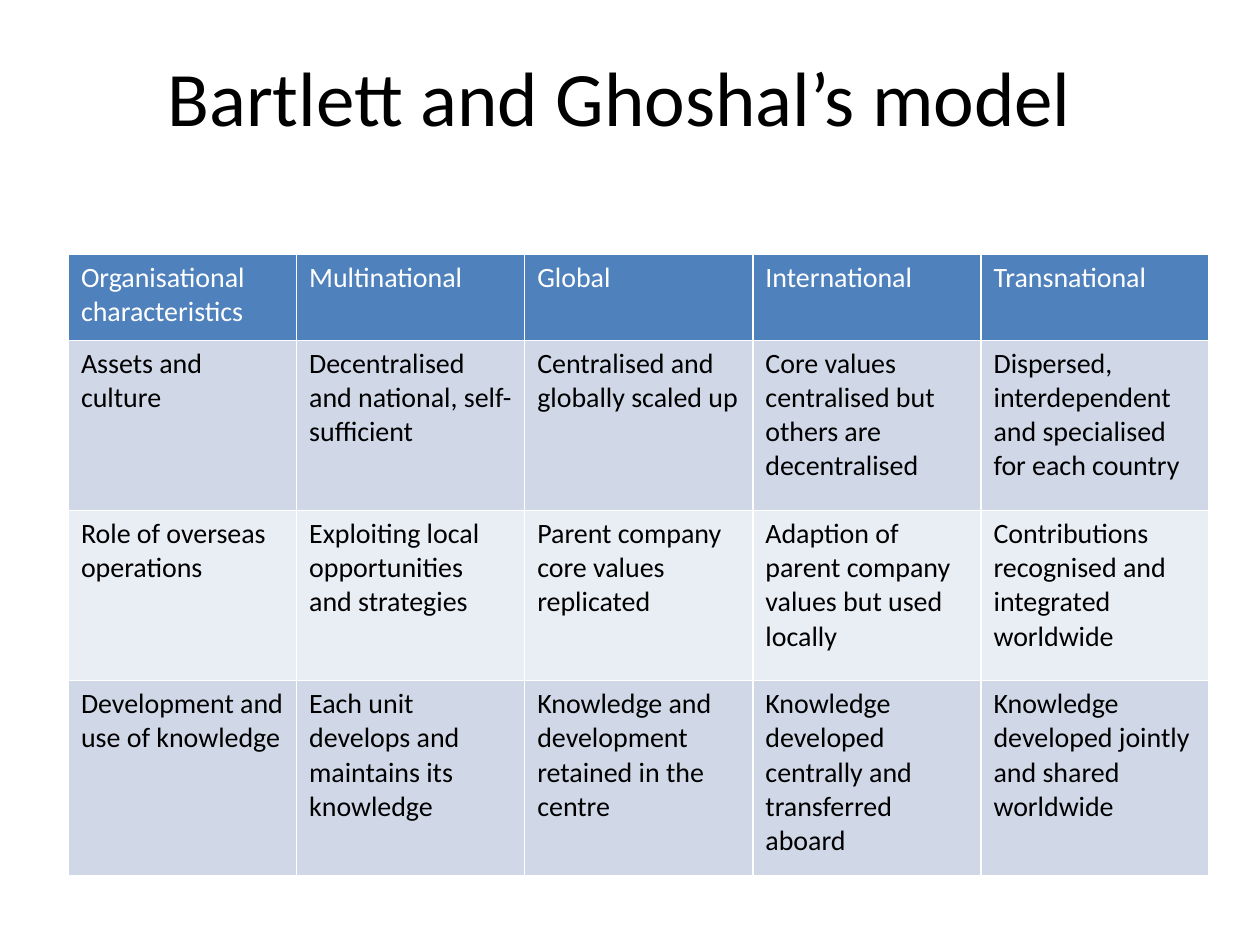
from pptx import Presentation
from pptx import util as u
from pptx.dml import color
from pptx.enum import text

TITLE = "Bartlett and Ghoshal’s model"
ROWS = [
    ("Organisational characteristics", "Multinational", "Global",
     "International", "Transnational"),
    ("Assets and culture",
     "Decentralised and national, self-sufficient",
     "Centralised and globally scaled up",
     "Core values centralised but others are decentralised",
     "Dispersed, interdependent and specialised for each country"),
    ("Role of overseas operations",
     "Exploiting local opportunities and strategies",
     "Parent company core values replicated",
     "Adaption of parent company values but used locally",
     "Contributions recognised and integrated worldwide"),
    ("Development and use of knowledge",
     "Each unit develops and maintains its knowledge",
     "Knowledge and development retained in the centre",
     "Knowledge developed centrally and transferred aboard",
     "Knowledge developed jointly and shared worldwide"),
]
ROW_HEIGHTS = [1.73, 3.43, 3.43, 3.94]
COLUMN_WIDTH = 4.6
HEADER_FILL = "4F81BD"
BAND_FILLS = ["D0D8E8", "E9EDF4"]


def rgb(value):
    return color.RGBColor.from_string(value)


def format_text(text_frame, size, font_color):
    for paragraph in text_frame.paragraphs:
        for run in paragraph.runs:
            run.font.name = "Calibri"
            run.font.size = u.Pt(size)
            run.font.bold = False
            run.font.color.rgb = rgb(font_color)


def add_title(slide):
    shape = slide.shapes.add_textbox(u.Cm(1.09), u.Cm(0.58), u.Cm(22.81), u.Cm(2.69))
    text_frame = shape.text_frame
    text_frame.word_wrap = True
    text_frame.vertical_anchor = text.MSO_ANCHOR.MIDDLE
    text_frame.text = TITLE
    text_frame.paragraphs[0].alignment = text.PP_ALIGN.CENTER
    format_text(text_frame, 44, "000000")


def add_model_table(slide):
    """The default table style supplies the white cell borders."""
    columns = len(ROWS[0])
    table = slide.shapes.add_table(
        len(ROWS), columns, u.Cm(1.38), u.Cm(5.13),
        u.Cm(COLUMN_WIDTH * columns), u.Cm(sum(ROW_HEIGHTS))).table
    for column in table.columns:
        column.width = u.Cm(COLUMN_WIDTH)
    for index, (labels, height) in enumerate(zip(ROWS, ROW_HEIGHTS)):
        table.rows[index].height = u.Cm(height)
        is_header = index == 0
        fill = HEADER_FILL if is_header else BAND_FILLS[(index - 1) % 2]
        for cell, label in zip(table.rows[index].cells, labels):
            cell.fill.solid()
            cell.fill.fore_color.rgb = rgb(fill)
            cell.text_frame.text = label
            format_text(cell.text_frame, 16, "FFFFFF" if is_header else "000000")


def main():
    presentation = Presentation()
    presentation.slide_width = u.Cm(25.4)
    presentation.slide_height = u.Cm(19.05)
    slide = presentation.slides.add_slide(presentation.slide_layouts[6])
    add_title(slide)
    add_model_table(slide)
    presentation.save("out.pptx")


if __name__ == "__main__":
    main()
